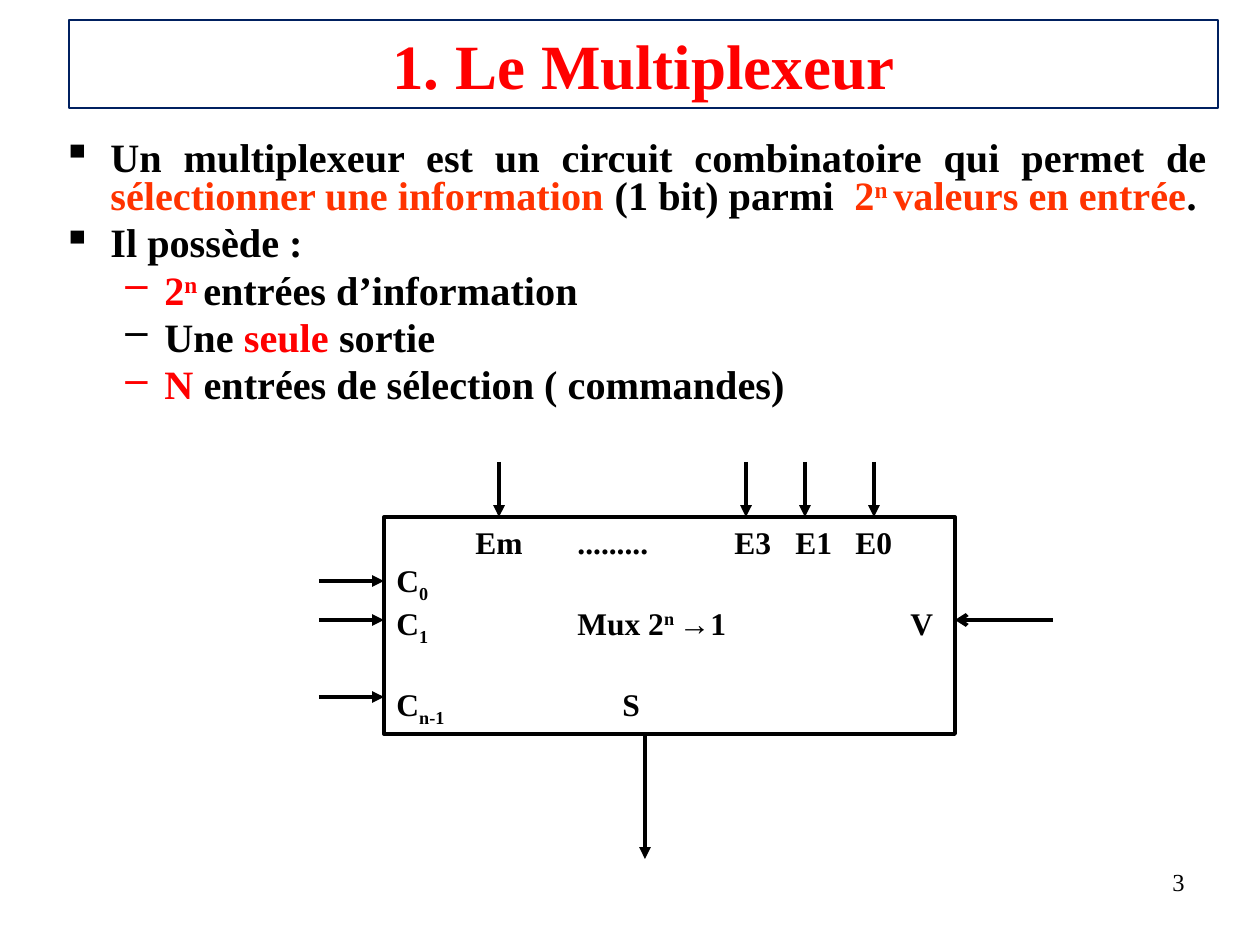
"""Build the slide that introduces the multiplexer and its block diagram."""
from pptx import Presentation
from pptx.dml.color import RGBColor
from pptx.enum.shapes import MSO_CONNECTOR, MSO_SHAPE
from pptx.enum.text import MSO_ANCHOR, PP_ALIGN
from pptx.oxml.ns import qn
from pptx.util import Emu, Pt
from lxml.etree import SubElement

COLORS = {"text": "000000", "red": "FF0000", "orange": "FF3300",
          "navy": "002060", "white": "FFFFFF"}


def px(length):
    return Emu(round(length * 914400 / 126))


def write(paragraph, text, size=18, color="text", bold=True, baseline=0):
    run = paragraph.add_run()
    run.text = text
    run.font.name = "Times New Roman"
    run.font.size = Pt(size)
    run.font.bold = bold
    run.font.color.rgb = RGBColor.from_string(COLORS[color])
    if baseline:
        run.font._element.set("baseline", str(baseline * 1000))


prs = Presentation()
prs.slide_width, prs.slide_height = px(1260), px(945)
slide = prs.slides.add_slide(prs.slide_layouts[6])
shapes = slide.shapes

page_number = shapes.add_textbox(px(903), px(861), px(294), px(66)).text_frame
page_number.word_wrap = True
page_number.paragraphs[0].alignment = PP_ALIGN.RIGHT
write(page_number.paragraphs[0], "3", size=14, bold=False)

title = shapes.add_shape(MSO_SHAPE.RECTANGLE, px(69), px(20), px(1149), px(88))
mux = shapes.add_shape(MSO_SHAPE.RECTANGLE, px(384), px(517), px(571), px(217))
for box, border, width, anchor in [(title, "navy", 0.75, MSO_ANCHOR.MIDDLE),
                                   (mux, "text", 2.25, MSO_ANCHOR.TOP)]:
    box.shadow.inherit = False
    box.fill.solid()
    box.fill.fore_color.rgb = RGBColor.from_string(COLORS["white"])
    box.line.color.rgb = RGBColor.from_string(COLORS[border])
    box.line.width = Pt(width)
    box.text_frame.word_wrap = True
    box.text_frame.vertical_anchor = anchor

title.text_frame.paragraphs[0].alignment = PP_ALIGN.CENTER
write(title.text_frame.paragraphs[0], "1. Le Multiplexeur", size=36, color="red")

points = [
    (0, [("Un multiplexeur est un circuit combinatoire qui permet de ", "text", 0),
         ("sélectionner une information", "orange", 0),
         (" (1 bit) parmi  ", "text", 0), ("2", "orange", 0), ("n ", "orange", 30),
         ("valeurs en entrée", "orange", 0), (".", "text", 0)]),
    (0, [("Il possède :", "text", 0)]),
    (1, [("2", "red", 0), ("n ", "red", 30), ("entrées d’information", "text", 0)]),
    (1, [("Une ", "text", 0), ("seule", "red", 0), (" sortie", "text", 0)]),
    (1, [("N", "red", 0), (" entrées de sélection ( commandes)", "text", 0)]),
]
levels = [("▪", 48, -48), ("–", 102, -39)]
body = shapes.add_textbox(px(50), px(135), px(1171), px(328)).text_frame
body.word_wrap = True
for index, (level, parts) in enumerate(points):
    point = body.add_paragraph() if index else body.paragraphs[0]
    point.level = level
    point.alignment = PP_ALIGN.JUSTIFY
    point.line_spacing = 0.8
    point.space_before = Pt(5)
    bullet, margin, indent = levels[level]
    properties = point._p.get_or_add_pPr()
    properties.set("marL", str(px(margin)))
    properties.set("indent", str(px(indent)))
    SubElement(properties, qn("a:buChar"), char=bullet)
    for text, color, baseline in parts:
        write(point, text, size=23, color=color, baseline=baseline)

mux_rows = [
    ([79, 181, 338, 399, 459], 0, [("\tEm\t.........\tE3\tE1\tE0", 0)]),
    ([], 0, [("C", 0), ("0", -25)]),
    ([181, 514], 0, [("C", 0), ("1", -25), ("\tMux 2", 0), ("n ", 30), ("→1\tV", 0)]),
    ([226], 22, [("C", 0), ("n-1", -25), ("\tS", 0)]),
]
for index, (stops, gap, parts) in enumerate(mux_rows):
    frame = mux.text_frame
    row = frame.add_paragraph() if index else frame.paragraphs[0]
    row.alignment = PP_ALIGN.LEFT
    row.space_before = Pt(gap)
    if stops:
        tabs = SubElement(row._p.get_or_add_pPr(), qn("a:tabLst"))
        for stop in stops:
            SubElement(tabs, qn("a:tab"), pos=str(px(stop)), algn="l")
    for text, baseline in parts:
        write(row, text, baseline=baseline)

commands = [(319, y, 384, y, "triangle") for y in (581, 620, 697)]
inputs = [(x, 462, x, 517, "triangle") for x in (499, 746, 805, 874)]
output = (645, 734, 645, 859, "triangle")
validation = (1053, 620, 955, 620, "arrow")
for x1, y1, x2, y2, head in [*commands, *inputs, output, validation]:
    signal = shapes.add_connector(MSO_CONNECTOR.STRAIGHT, px(x1), px(y1), px(x2), px(y2))
    signal.line.color.rgb = RGBColor.from_string(COLORS["text"])
    signal.line.width = Pt(2.25)
    SubElement(signal.line._get_or_add_ln(), qn("a:tailEnd"), type=head)
    SubElement(signal._element.spPr, qn("a:effectLst"))

prs.save("out.pptx")
